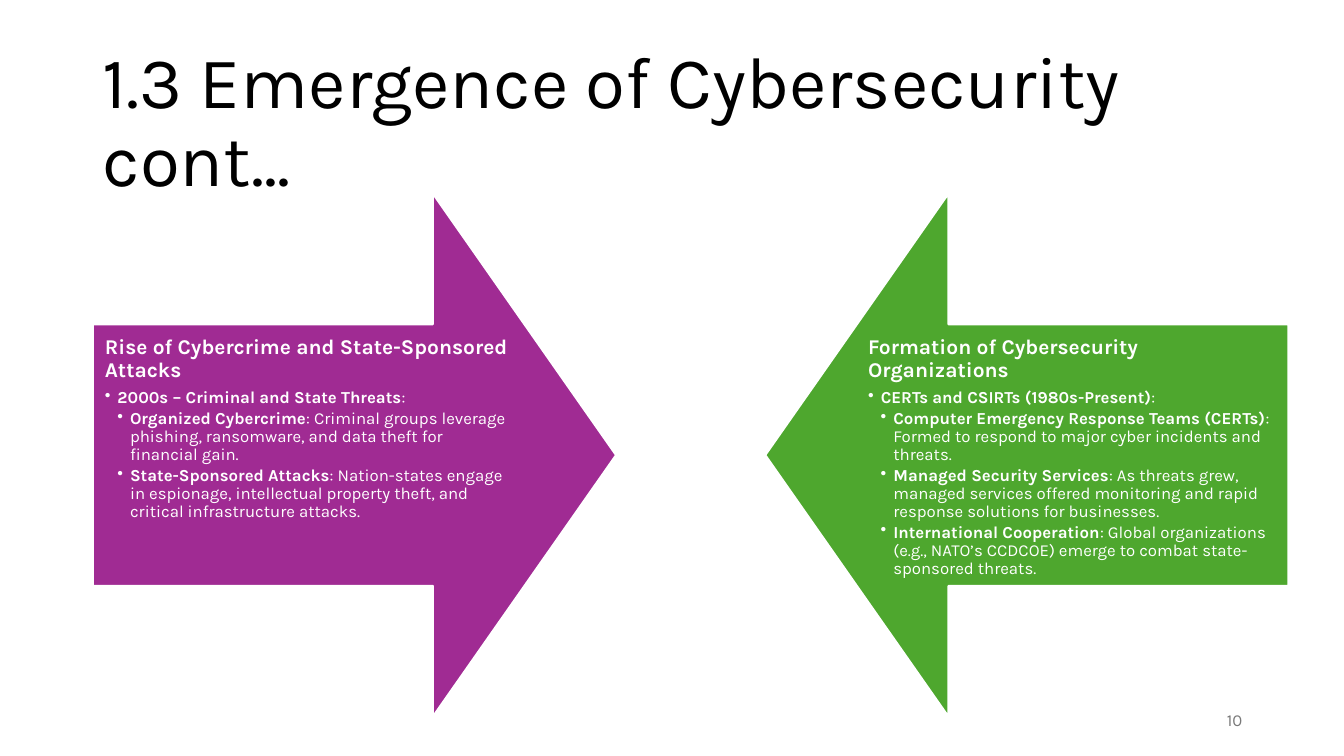
from lxml import etree
from pptx import Presentation
from pptx.dml.color import RGBColor
from pptx.enum.shapes import MSO_SHAPE
from pptx.enum.text import MSO_ANCHOR, PP_ALIGN
from pptx.oxml.ns import qn
from pptx.util import Inches, Pt

ARROW = MSO_SHAPE.DOWN_ARROW
TOP, MIDDLE = MSO_ANCHOR.TOP, MSO_ANCHOR.MIDDLE
LEFT, RIGHT = PP_ALIGN.LEFT, PP_ALIGN.RIGHT
FONT = "Karla"
WHITE = "FFFFFF"
SIDE = 5.19
INDENT = 0.125

RISE = [
    (0, "Rise of Cybercrime and State-Sponsored Attacks", ""),
    (1, "2000s – Criminal and State Threats", ":"),
    (2, "Organized Cybercrime",
     ": Criminal groups leverage phishing, ransomware, and data theft for financial gain."),
    (2, "State-Sponsored Attacks",
     ": Nation-states engage in espionage, intellectual property theft, "
     "and critical infrastructure attacks."),
]
FORM = [
    (0, "Formation of Cybersecurity Organizations", ""),
    (1, "CERTs and CSIRTs (1980s-Present)", ":"),
    (2, "Computer Emergency Response Teams (CERTs)",
     ": Formed to respond to major cyber incidents and threats."),
    (2, "Managed Security Services",
     ": As threats grew, managed services offered monitoring and rapid "
     "response solutions for businesses."),
    (2, "International Cooperation",
     ": Global organizations (e.g., NATO’s CCDCOE) emerge to combat "
     "state-sponsored threats."),
]


def color(code):
    return RGBColor.from_string(code)


def add_run(para, text, size, code, bold=False):
    run = para.add_run()
    run.text = text
    run.font.name = FONT
    run.font.size = Pt(size)
    run.font.bold = bold
    run.font.color.rgb = color(code)


def add_box(slide, left, top, width, height, anchor):
    box = slide.shapes.add_textbox(Inches(left), Inches(top), Inches(width), Inches(height))
    frame = box.text_frame
    frame.word_wrap = True
    frame.vertical_anchor = anchor
    return frame


def add_label(slide, place, text, size, code, align):
    para = add_box(slide, *place, MIDDLE).paragraphs[0]
    para.alignment = align
    para.line_spacing = 0.9
    add_run(para, text, size, code)


def add_bullet(para, level):
    props = para._p.get_or_add_pPr()
    props.set("marL", str(Inches(INDENT * level)))
    props.set("indent", str(-Inches(INDENT)))
    etree.SubElement(props, qn("a:buChar")).set("char", "•")


def add_arrow(slide, left, turn, fill):
    arrow = slide.shapes.add_shape(
        ARROW, Inches(left), Inches(1.92), Inches(SIDE), Inches(SIDE))
    arrow.rotation = turn
    arrow.adjustments[0] = 0.5
    arrow.adjustments[1] = 0.35
    arrow.shadow.inherit = False
    arrow.fill.solid()
    arrow.fill.fore_color.rgb = color(fill)
    arrow.line.color.rgb = color(WHITE)
    arrow.line.width = Pt(1.5)


def add_points(slide, left, points):
    frame = add_box(slide, left, 3.22, 4.28, 2.59, TOP)
    frame.margin_left = frame.margin_right = Inches(0.12)
    frame.margin_top = frame.margin_bottom = Inches(0.12)
    for index, (level, head, rest) in enumerate(points):
        para = frame.add_paragraph() if index else frame.paragraphs[0]
        para.level = level
        para.line_spacing = 0.9
        size, share = (12, 0.15) if level else (15, 0.35)
        para.space_after = Pt(size * share)
        if level:
            add_bullet(para, level)
        add_run(para, head, size, WHITE, True)
        if rest:
            add_run(para, rest, size, WHITE)


def main():
    deck = Presentation()
    deck.slide_width = Inches(13.33)
    deck.slide_height = Inches(7.5)
    slide = deck.slides.add_slide(deck.slide_layouts[6])
    add_label(slide, (0.92, 0.61, 11.5, 1.24),
              "1.3 Emergence of Cybersecurity cont...", 52, "000000", LEFT)
    add_label(slide, (9.42, 6.95, 3, 0.4), "10", 12, "797979", RIGHT)
    add_arrow(slide, 0.92, 270, "A02B93")
    add_points(slide, 0.92, RISE)
    add_arrow(slide, 7.59, 90, "4EA72E")
    add_points(slide, 8.49, FORM)
    deck.save("out.pptx")


if __name__ == "__main__":
    main()
